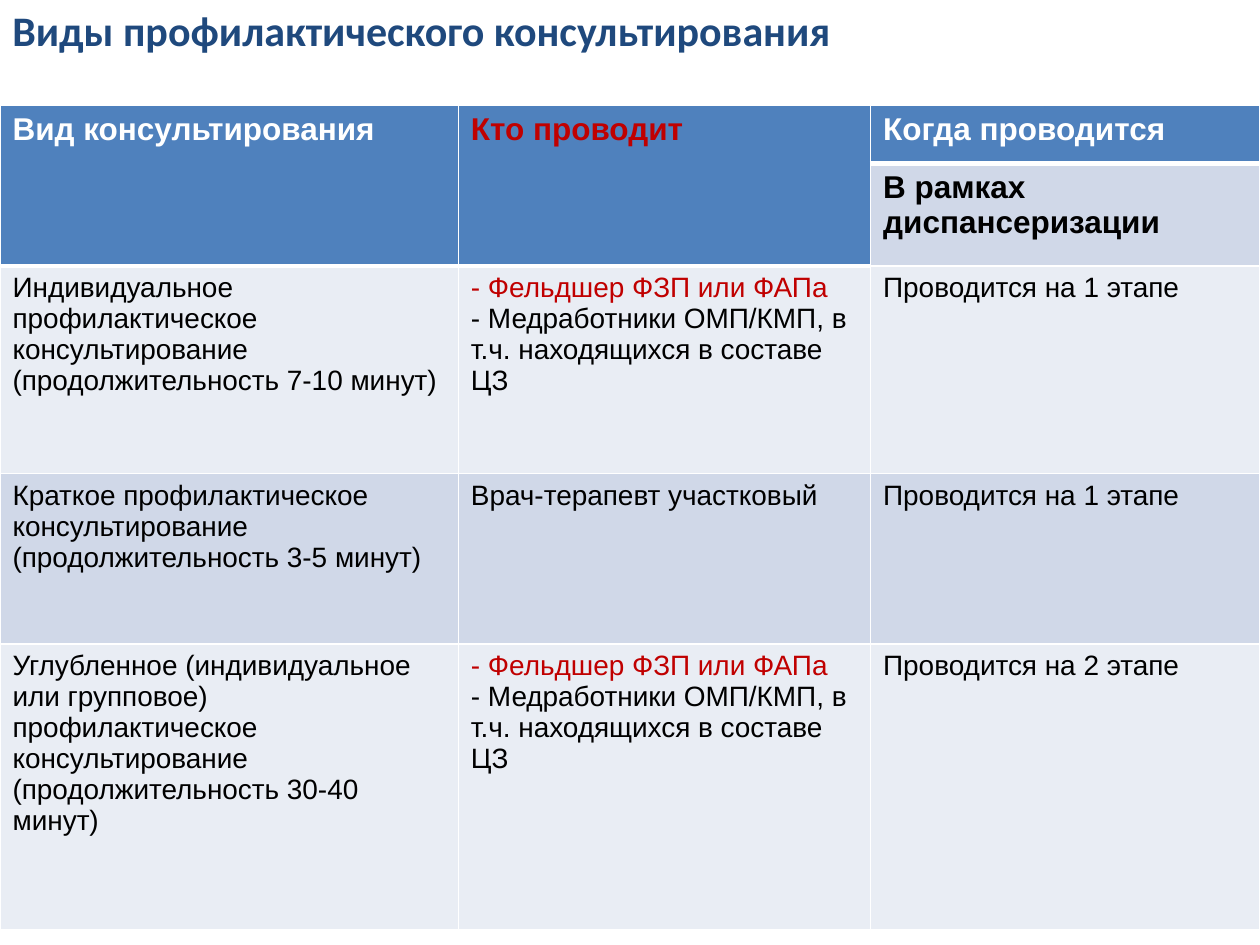
"""Builds a slide with a table of the kinds of preventive counselling."""
from lxml import etree
from pptx import Presentation
from pptx.dml.color import RGBColor
from pptx.enum.text import MSO_AUTO_SIZE
from pptx.oxml.ns import qn
from pptx.util import Cm, Pt

GROW = MSO_AUTO_SIZE.SHAPE_TO_FIT_TEXT
HUES = {"white": "FFFFFF", "black": "000000", "red": "C00000", "navy": "1F497D",
        "head": "4F81BD", "dark": "D0D8E8", "light": "E9EDF4"}


def style(para, font, size, hue, bold):
    for run in para.runs:
        run.font.name = font
        run.font.size = Pt(size)
        run.font.bold = bold
        run.font.color.rgb = RGBColor.from_string(HUES[hue])


def border(cell, sides):
    props = cell._tc.get_or_add_tcPr()
    for spot, (side, width) in enumerate(sides.items()):
        line = etree.Element(qn(f"a:ln{side}"), w=str(Pt(width)))
        fill = etree.SubElement(line, qn("a:solidFill"))
        etree.SubElement(fill, qn("a:srgbClr"), val=HUES["white"])
        props.insert(spot, line)


deck = Presentation()
deck.slide_width, deck.slide_height = Cm(25.4), Cm(19.05)
slide = deck.slides.add_slide(deck.slide_layouts[6])

nurse = "- Фельдшер ФЗП или ФАПа"
staff = f"{nurse}\n- Медработники ОМП/КМП, в т.ч. находящихся в составе ЦЗ"
first = "Проводится на 1 этапе"
rows = [
    ["Вид консультирования", "Кто проводит", "Когда проводится"],
    ["", "", "В рамках диспансеризации"],
    ["Индивидуальное профилактическое консультирование\n"
     "(продолжительность 7-10 минут)", staff, first],
    ["Краткое профилактическое консультирование\n"
     "(продолжительность 3-5 минут)", "Врач-терапевт участковый", first],
    ["Углубленное (индивидуальное или групповое) профилактическое консультирование\n"
     "(продолжительность 30-40 минут)", staff, "Проводится на 2 этапе"],
]
fills = ["head", "dark", "light", "dark", "light"]
widths = [9.24, 8.31, 7.85]
heights = [1.17, 2.06, 4.19, 3.43, 5.77]

frame = slide.shapes.add_table(len(rows), len(widths), Cm(0), Cm(2.13),
                               Cm(sum(widths)), Cm(sum(heights)))
table = frame.table
for col, width in zip(table.columns, widths):
    col.width = Cm(width)
for row, height in zip(table.rows, heights):
    row.height = Cm(height)
for c in range(2):
    table.cell(0, c).merge(table.cell(1, c))

for r, row in enumerate(rows):
    for c, words in enumerate(row):
        cell = table.cell(r, c)
        last = 0 if c == 2 else 1
        top = r <= last
        cell.fill.solid()
        cell.fill.fore_color.rgb = RGBColor.from_string(HUES["head" if top else fills[r]])
        border(cell, {"L": 1, "R": 1, "T": 3 if r == last + 1 else 1, "B": 3 if top else 1})
        if not words:
            continue
        cell.text_frame.text = words
        for para in cell.text_frame.paragraphs:
            red = para.text in (nurse, "Кто проводит")
            hue = "red" if red else "white" if top else "black"
            style(para, "Arial", 18 if r < 2 else 16, hue, r < 2)

title = slide.shapes.add_textbox(Cm(0), Cm(-0.03), Cm(24.61), Cm(1.3))
title.text_frame.word_wrap = True
title.text_frame.auto_size = GROW
title.text_frame.text = "Виды профилактического консультирования"
style(title.text_frame.paragraphs[0], "Calibri", 24, "navy", True)

deck.save("out.pptx")
